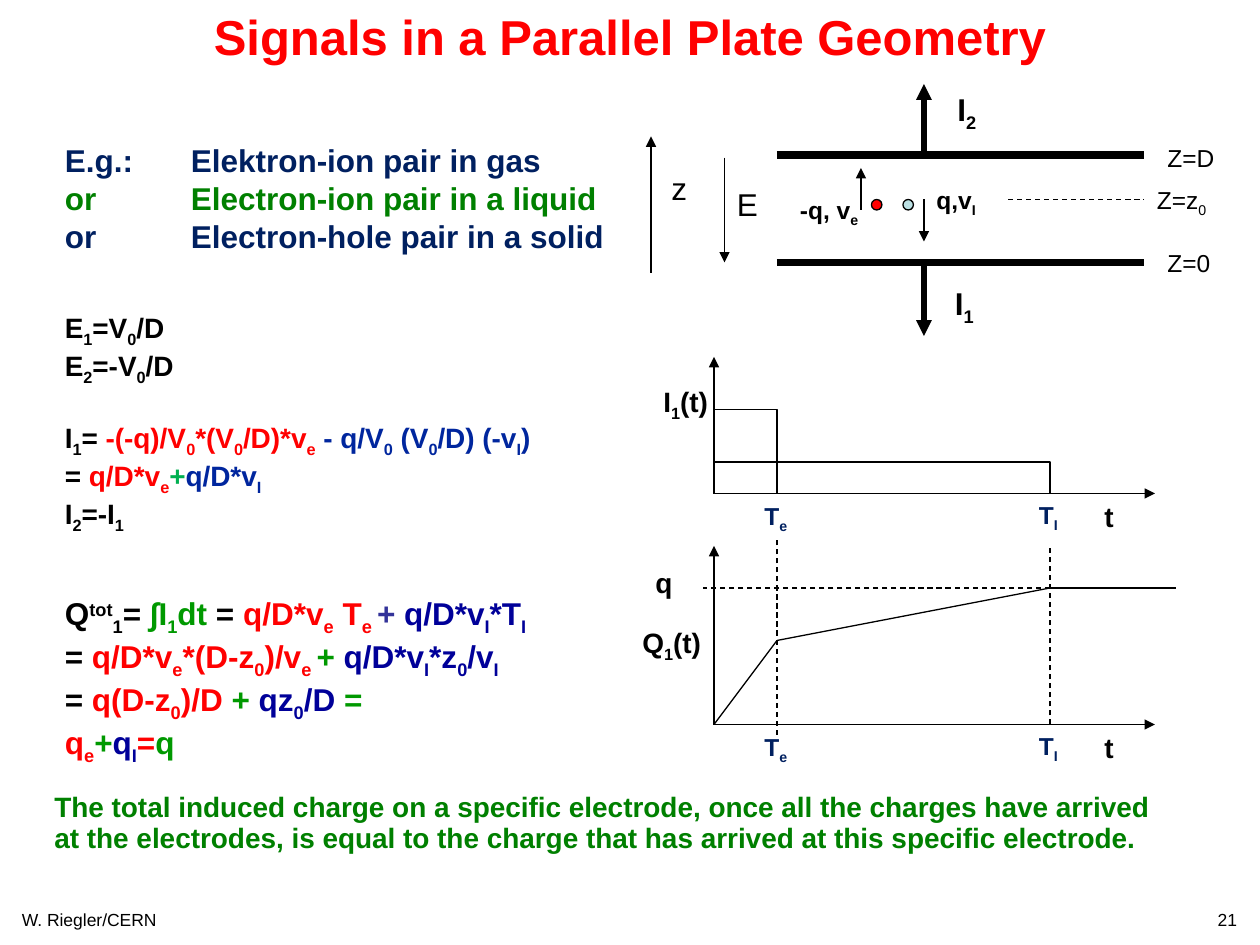
from itertools import pairwise

import pptx
import pptx.dml.color
import pptx.enum.dml
import pptx.enum.shapes
import pptx.enum.text
import pptx.oxml
import pptx.oxml.ns
import pptx.util

Pt = pptx.util.Pt
ALIGN = pptx.enum.text.PP_ALIGN

THEME = {
    "font": "Arial",
    "colors": {
        "black": "000000", "red": "FF0000", "navy": "002060", "green": "008000",
        "blue": "00269E", "mint": "00B050", "leaf": "009900", "ink": "000099",
        "violet": "333399", "ice": "BBE0E3",
    },
    "sizes": {"title": 28, "large": 18, "text": 16, "label": 14, "footer": 10},
    "thin": 0.75, "arrow": 3, "plate": 4.5,
}

# Content: each paragraph is a list of (text, color); _x_ is a subscript, _^x_ a superscript
TITLE = [[("Signals in a Parallel Plate Geometry", "red")]]
EXAMPLES = [
    [("E.g.: \tElektron-ion pair in gas", "navy")],
    [("or \tElectron-ion pair in a liquid", "green")],
    [("or\tElectron-hole pair in a solid", "navy")],
]
CURRENTS = [
    [("E_1_=V_0_/D", "black")],
    [("E_2_=-V_0_/D", "black")],
    [("I_1_= ", "black"), ("-(-q)/V_0_*(V_0_/D)*v_e_ ", "red"),
     ("- q/V_0_ (V_0_/D) (-v_I_)", "blue")],
    [("= ", "black"), ("q/D*v_e_", "red"), ("+", "mint"), ("q/D*v_I_", "blue")],
    [("I_2_=-I_1_", "black")],
]
CHARGES = [
    [("Q_^tot__1_= ", "black"), ("∫I_1_dt", "leaf"), (" = ", "black"),
     ("q/D*v_e_ T_e _", "red"), ("+ ", "violet"), ("q/D*v_I_*T_I_", "ink")],
    [("= ", "black"), ("q/D*v_e_*(D-z_0_)/v_e _", "red"), ("+ ", "leaf"),
     ("q/D*v_I_*z_0_/v_I_", "ink")],
    [("= ", "black"), ("q(D-z_0_)/D ", "red"), ("+ ", "leaf"),
     ("qz_0_/D", "ink"), (" =", "leaf")],
    [("q_e_", "red"), ("+", "leaf"), ("q_I_", "ink"), ("=", "red"), ("q", "leaf")],
]
SUMMARY = [[("The total induced charge on a specific electrode, once all the charges "
             "have arrived at the electrodes, is equal to the charge that has arrived "
             "at this specific electrode.", "green")]]

# Chamber labels: text, left, top, width, height, size, bold
CHAMBER_LABELS = [
    ("I_1_", 538.5, 159, 26, 29, "large", True),
    ("I_2_", 540, 48, 26, 29, "large", True),
    ("q,v_I_", 528, 102, 38, 24, "label", True),
    ("-q, v_e_", 450, 108, 48, 24, "label", True),
    ("z", 376.5, 93, 24, 29, "large", False),
    ("E", 414, 102, 27, 29, "large", False),
    ("Z=D", 660, 78, 44, 24, "label", False),
    ("Z=0", 660, 138, 44, 24, "label", False),
    ("Z=z_0_", 654, 102, 44, 24, "label", False),
]
# Lines: start, end, width, style
CHAMBER_LINES = [
    ((444, 88.5), (654, 88.5), "plate", None),
    ((444, 150), (654, 150), "plate", None),
    ((528, 90), (528, 48), "arrow", "head"),
    ((528, 150), (528, 192), "arrow", "head"),
    ((528, 114), (528, 138), "thin", "head"),
    ((492, 120), (492, 96), "thin", "head"),
    ((372, 156), (372, 78), "thin", "head"),
    ((414, 90), (414, 150), "thin", "head"),
    ((576, 114), (654, 114), "thin", "dash"),
]
CHARGE_DOTS = [(498, "red"), (516, "ice")]

# Time graphs: shared origin and times, then (baseline, axis top) of each graph
ORIGIN, TIME_E, TIME_I, AXIS_END = 408, 444, 600, 660
GRAPHS = [(282, 204), (414, 312)]
PULSES = [(TIME_E, 48), (TIME_I, 18)]
FULL_CHARGE = 336
CURVE = [(ORIGIN, 414), (TIME_E, 366), (TIME_I, FULL_CHARGE), (672, FULL_CHARGE)]
GUIDES = [((TIME_E, 420), (TIME_E, 307)), ((TIME_I, 414), (TIME_I, 312)),
          ((TIME_I, FULL_CHARGE), (402, FULL_CHARGE))]
GRAPH_LABELS = [("I_1_(t)", 372, 216, 41), ("Q_1_(t)", 360, 354, 50), ("q", 367.5, 319.5, 25)]

deck = pptx.Presentation()
deck.slide_width, deck.slide_height = Pt(720), Pt(540)
page = deck.slides.add_slide(deck.slide_layouts[5])


def color(name):
    return pptx.dml.color.RGBColor.from_string(THEME["colors"][name])


def drawing_element(tag, **attributes):
    element = pptx.oxml.parse_xml(f"<a:{tag} {pptx.oxml.ns.nsdecls('a')}/>")
    for name, value in attributes.items():
        element.set(name, str(value))
    return element


def add_spans(para, text, tint, size, bold):
    for index, piece in enumerate(text.split("_")):
        if not piece:
            continue
        span = para.add_run()
        span.text = piece.lstrip("^")
        span.font.name, span.font.size, span.font.bold = THEME["font"], Pt(size), bold
        span.font.color.rgb = color(tint)
        if index % 2:
            span.font._element.set("baseline", "30000" if piece[0] == "^" else "-25000")


def write(box, paras, size, bold=True, wrap=False, align=ALIGN.LEFT):
    frame = box.text_frame
    frame.word_wrap = wrap
    frame.auto_size = pptx.enum.text.MSO_AUTO_SIZE.SHAPE_TO_FIT_TEXT
    frame.vertical_anchor = pptx.enum.text.MSO_ANCHOR.TOP
    for index, parts in enumerate(paras):
        para = frame.paragraphs[0] if index == 0 else frame.add_paragraph()
        para.alignment = align
        for text, tint in parts:
            add_spans(para, text, tint, THEME["sizes"][size], bold)
    return frame


def add_text(paras, left, top, width, height, size, **options):
    box = page.shapes.add_textbox(Pt(left), Pt(top), Pt(width), Pt(height))
    return write(box, paras, size, **options)


def add_line(start, end, width="thin", style=None):
    line = page.shapes.add_connector(pptx.enum.shapes.MSO_CONNECTOR.STRAIGHT,
                                     *(Pt(value) for value in (*start, *end)))
    line.line.color.rgb = color("black")
    line.line.width = Pt(THEME[width])
    properties = line._element.spPr
    if style == "dash":
        line.line.dash_style = pptx.enum.dml.MSO_LINE.DASH
    if style == "head":
        outline = properties.find(pptx.oxml.ns.qn("a:ln"))
        outline.append(drawing_element("tailEnd", type="triangle"))
    properties.append(drawing_element("effectLst"))


def add_outline(kind, left, top, width, height, fill=None):
    shape = page.shapes.add_shape(kind, Pt(left), Pt(top), Pt(width), Pt(height))
    shape.shadow.inherit = False
    shape.line.color.rgb = color("black")
    shape.line.width = Pt(THEME["thin"])
    if fill:
        shape.fill.solid()
        shape.fill.fore_color.rgb = color(fill)
    else:
        shape.fill.background()


# Title
title = page.shapes.title
title.left, title.top, title.width, title.height = Pt(0), Pt(0), Pt(720), Pt(41)
write(title, TITLE, "title", wrap=True, align=ALIGN.CENTER)

# Text column
examples = add_text(EXAMPLES, 30, 77, 330.5, 73, "large")
for para in examples.paragraphs:
    tabs = drawing_element("tabLst")
    tabs.append(drawing_element("tab", pos=Pt(72), algn="l"))
    para._p.get_or_add_pPr().append(tabs)
currents = add_text(CURRENTS, 30, 174, 296, 124, "text")
currents.paragraphs[2].space_before = Pt(19)
add_text(CHARGES, 30, 336, 324, 94.5, "large", wrap=True)
summary = add_text(SUMMARY, 24, 450, 642, 60, "text", wrap=True)
summary.paragraphs[0].line_spacing = 0.9

# Chamber with plates, charges and fields
for start, end, width, style in CHAMBER_LINES:
    add_line(start, end, width, style)
for left, tint in CHARGE_DOTS:
    add_outline(pptx.enum.shapes.MSO_SHAPE.OVAL, left, 114, 6, 6, tint)
for text, left, top, width, height, size, bold in CHAMBER_LABELS:
    add_text([[(text, "black")]], left, top, width, height, size, bold=bold)

# Axes and time labels of both graphs
for base, top in GRAPHS:
    add_line((ORIGIN, base), (ORIGIN, top), style="head")
    add_line((ORIGIN, base), (AXIS_END, base), style="head")
    add_text([[("t", "black")]], 624, base, 20, 26.5, "text")
    add_text([[("T_e_", "navy")]], 429.7, base + 0.7, 28, 24, "label")
    add_text([[("T_I_", "navy")]], 586.5, base, 26, 24, "label")

# Current pulses, charge curve and guides
for end, height in PULSES:
    add_outline(pptx.enum.shapes.MSO_SHAPE.RECTANGLE,
                ORIGIN, GRAPHS[0][0] - height, end - ORIGIN, height)
for start, end in pairwise(CURVE):
    add_line(start, end)
for start, end in GUIDES:
    add_line(start, end, style="dash")
for text, left, top, width in GRAPH_LABELS:
    add_text([[(text, "black")]], left, top, width, 26.5, "text")

# Footer
add_text([[("W. Riegler/CERN", "black")]], 0, 516, 102, 24, "footer",
         bold=False, wrap=True, align=ALIGN.CENTER)
add_text([[("21", "black")]], 684, 516, 30, 19, "footer",
         bold=False, wrap=True, align=ALIGN.RIGHT)

deck.save("out.pptx")
